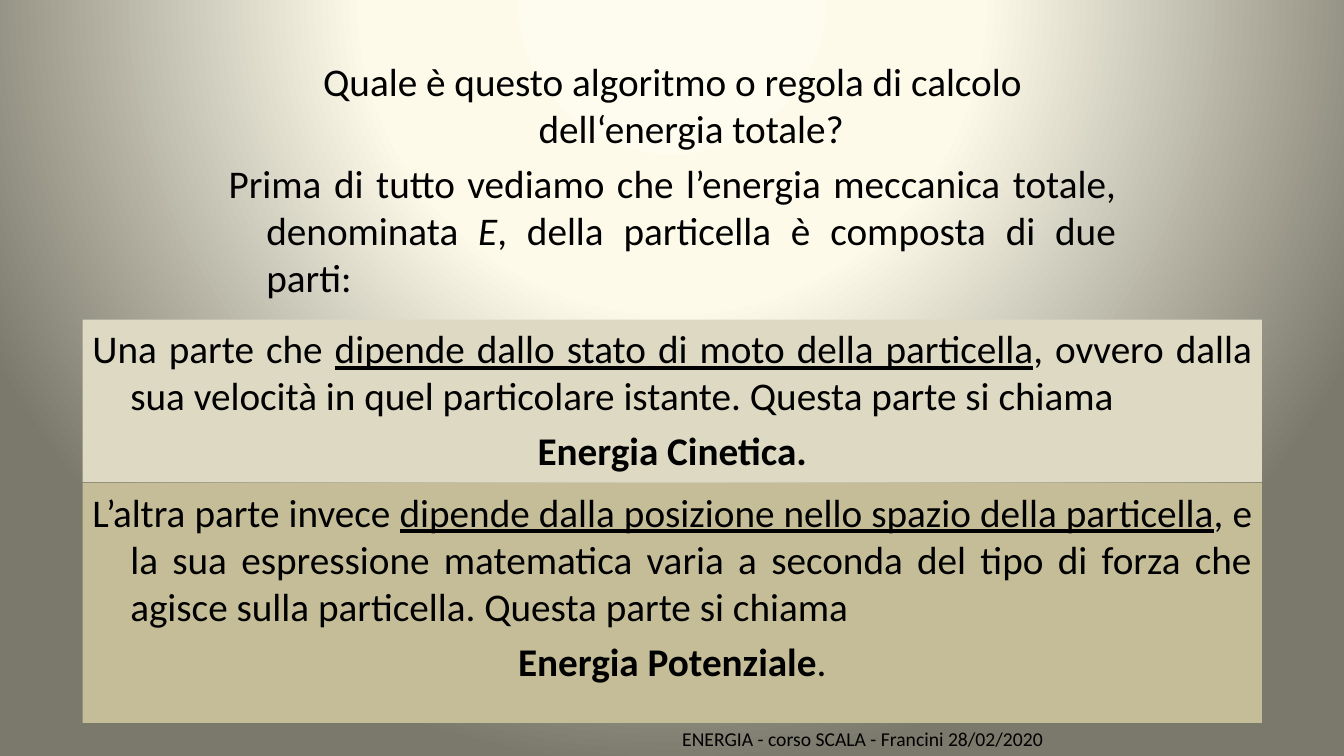
from dataclasses import dataclass

from lxml import etree
from pptx import Presentation
from pptx.dml.color import RGBColor
from pptx.enum.shapes import MSO_SHAPE
from pptx.enum.text import MSO_ANCHOR, PP_ALIGN
from pptx.oxml.ns import qn
from pptx.util import Pt

RECT = MSO_SHAPE.RECTANGLE
TOP = MSO_ANCHOR.TOP
LEFT, MID, JUST = PP_ALIGN.LEFT, PP_ALIGN.CENTER, PP_ALIGN.JUSTIFY

COLORS = {
    "ink": "000000",
    "sand": "DDD9C3",
    "khaki": "C4BD97",
    "glow": "FEFCEE",
    "cream": "FDFAEA",
    "dusk": "7B796B",
}
FONT = "Calibri"
HANG = 27


@dataclass
class Run:
    text: str
    bold: bool = False
    italic: bool = False
    line: bool = False


@dataclass
class Para:
    runs: list[Run]
    align: PP_ALIGN = JUST


@dataclass
class Block:
    left: float
    top: float
    width: float
    height: float
    paras: list[Para]
    fill: str = ""
    size: float = 28
    hang: float = HANG


def write(frame, paras: list[Para], *, size: float, hang: float) -> None:
    frame.word_wrap = True
    frame.vertical_anchor = TOP
    for i, para in enumerate(paras):
        p = frame.paragraphs[0] if i == 0 else frame.add_paragraph()
        p.alignment = para.align
        p.space_before = Pt(size * 0.2)
        props = p._p.get_or_add_pPr()
        props.set("marL", str(Pt(hang)))
        props.set("indent", str(-Pt(hang)))
        for run in para.runs:
            r = p.add_run()
            r.text = run.text
            font = r.font
            font.name, font.size = FONT, Pt(size)
            font.bold, font.italic, font.underline = run.bold, run.italic, run.line
            font.color.rgb = RGBColor.from_string(COLORS["ink"])


def draw(slide, block: Block) -> None:
    area = [Pt(v) for v in (block.left, block.top, block.width, block.height)]
    if block.fill:
        shape = slide.shapes.add_shape(RECT, *area)
        shape.shadow.inherit = False
        shape.fill.solid()
        shape.fill.fore_color.rgb = RGBColor.from_string(COLORS[block.fill])
        shape.line.fill.background()
    else:
        shape = slide.shapes.add_textbox(*area)
    write(shape.text_frame, block.paras, size=block.size, hang=block.hang)


def shade(slide) -> None:
    """Fill the background with a round glow centred above the slide."""
    slide.background.fill.gradient()
    grad = next(slide.element.iter(qn("a:gradFill")))
    for child in list(grad):
        grad.remove(child)
    stops = etree.SubElement(grad, qn("a:gsLst"))
    for pos, name in ((0, "glow"), (40, "cream"), (100, "dusk")):
        stop = etree.SubElement(stops, qn("a:gs"), pos=str(pos * 1000))
        etree.SubElement(stop, qn("a:srgbClr"), val=COLORS[name])
    ring = etree.SubElement(grad, qn("a:path"), {"path": "circle"})
    etree.SubElement(ring, qn("a:fillToRect"),
                     l="50000", t="-80000", r="50000", b="180000")


BLOCKS = [
    # Question and introduction
    Block(156.24, 37.44, 648, 185, [
        Para([Run("Quale è questo algoritmo o regola di calcolo dell‘energia totale?")], MID),
        Para([
            Run("Prima di tutto vediamo che l’energia meccanica totale, denominata "),
            Run("E", italic=True),
            Run(", della particella è composta di due parti:"),
        ]),
    ]),
    # Footer
    Block(480.24, 515.5, 360, 24.5,
          [Para([Run("ENERGIA - corso SCALA - Francini 28/02/2020")], LEFT)],
          size=14, hang=0),
    # Kinetic energy
    Block(59, 228.4, 842.4, 116, [
        Para([
            Run("Una parte che "),
            Run("dipende dallo stato di moto della particella", line=True),
            Run(", ovvero dalla sua velocità in quel particolare istante. "
                "Questa parte si chiama "),
        ]),
        Para([Run("Energia Cinetica.", bold=True)], MID),
    ], fill="sand"),
    # Potential energy
    Block(59, 344.9, 842.4, 171.4, [
        Para([
            Run("L’altra parte invece "),
            Run("dipende dalla posizione nello spazio della particella", line=True),
            Run(", e la sua espressione matematica varia a seconda del tipo di forza "
                "che agisce sulla particella. Questa parte si chiama "),
        ]),
        Para([Run("Energia Potenziale", bold=True), Run(".")], MID),
    ], fill="khaki"),
]


def main() -> None:
    deck = Presentation()
    deck.slide_width, deck.slide_height = Pt(960), Pt(540)
    slide = deck.slides.add_slide(deck.slide_layouts[6])
    shade(slide)
    for block in BLOCKS:
        draw(slide, block)
    deck.save("out.pptx")


if __name__ == "__main__":
    main()
